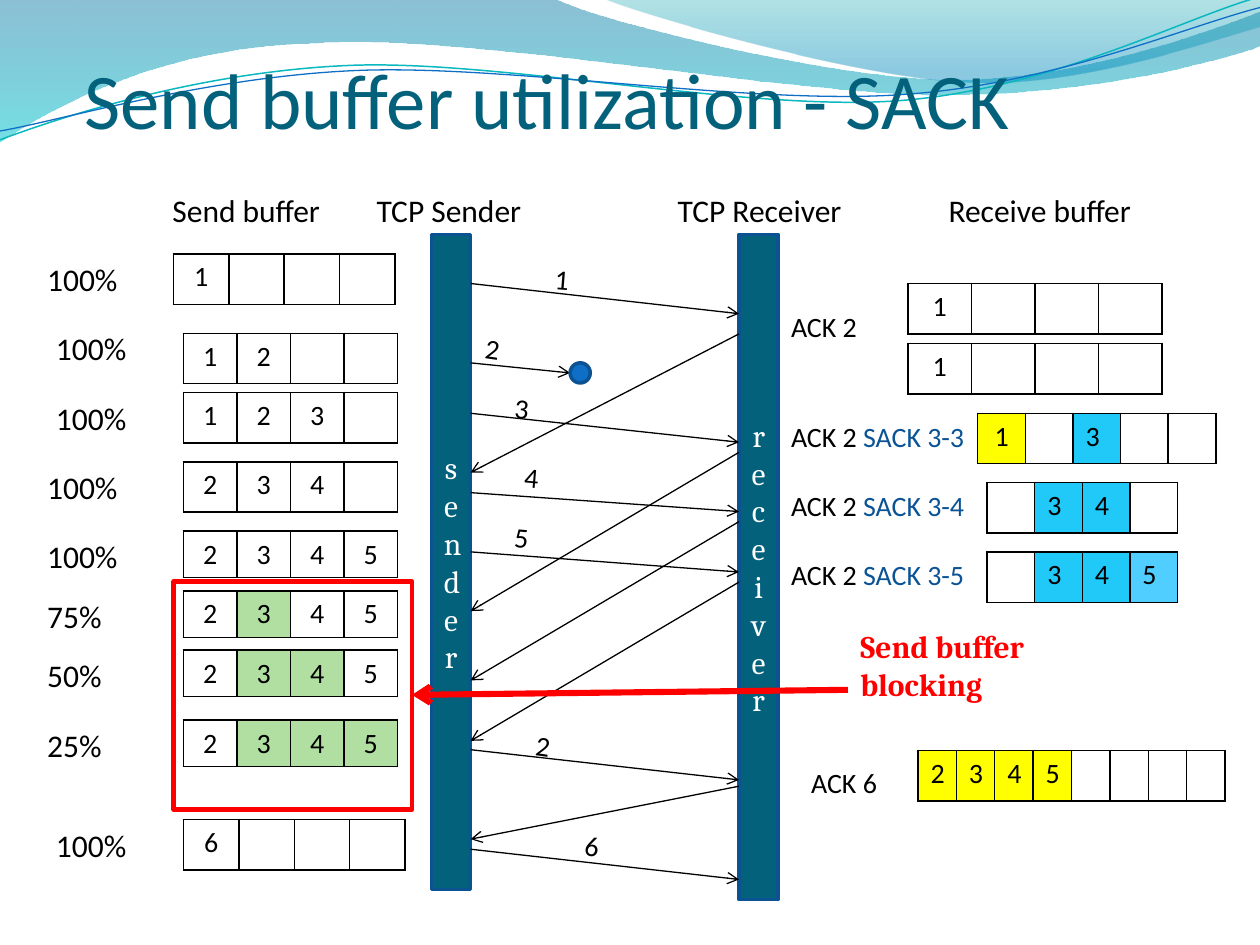
from dataclasses import dataclass

from lxml import etree
from pptx import Presentation
from pptx.dml.color import RGBColor
from pptx.enum.shapes import MSO_CONNECTOR, MSO_SHAPE
from pptx.enum.text import MSO_ANCHOR, PP_ALIGN
from pptx.oxml.ns import qn
from pptx.util import Emu, Inches, Pt

LINE = MSO_CONNECTOR.STRAIGHT
RECT, OVAL = MSO_SHAPE.RECTANGLE, MSO_SHAPE.OVAL
TOP, MIDDLE, BOTTOM = MSO_ANCHOR.TOP, MSO_ANCHOR.MIDDLE, MSO_ANCHOR.BOTTOM
LEFT, CENTER = PP_ALIGN.LEFT, PP_ALIGN.CENTER
COLS, ROWS = 100, 75
UNIT = Inches(10) // COLS


@dataclass(frozen=True)
class Theme:
    sans: str = "Calibri"
    serif: str = "Cambria"
    black: str = "000000"
    white: str = "FFFFFF"
    teal: str = "04617B"
    navy: str = "0B5292"
    sack: str = "0B5394"
    blue: str = "0F6FC6"
    cyan: str = "0AB8BF"
    red: str = "FF0000"
    title: int = 45
    head: int = 18
    body: int = 16


T = Theme()
MARKS = {"y": "FFFF00", "b": "20C9F8", "s": "4FCEFF", "g": "B0DFA1"}


@dataclass(frozen=True)
class Box:
    x: float
    y: float
    w: float
    h: float

    def sub(self, x, y, w, h):
        return Box(self.x + x, self.y + y, w, h)

    def emu(self):
        return [grid(v) for v in (self.x, self.y, self.w, self.h)]


def grid(n):
    return Emu(round(n * UNIT))


def rgb(code):
    return RGBColor.from_string(code)


def write(frame, runs, size, font=T.sans, bold=False, align=LEFT):
    """Fill the first paragraph with (text, colour) runs."""
    para = frame.paragraphs[0]
    para.alignment = align
    for text, color in runs:
        run = para.add_run()
        run.text = text
        run.font.size, run.font.name, run.font.bold = Pt(size), font, bold
        run.font.color.rgb = rgb(color)


def label(slide, box, runs, size, anchor=TOP, turn=0, font=T.sans, bold=False):
    shape = slide.shapes.add_textbox(*box.emu())
    shape.rotation = turn
    shape.text_frame.word_wrap = True
    shape.text_frame.vertical_anchor = anchor
    write(shape.text_frame, runs, size, font, bold)
    return shape


def solid(slide, kind, box, fill, line, width):
    shape = slide.shapes.add_shape(kind, *box.emu())
    shape.shadow.inherit = False
    if fill:
        shape.fill.solid()
        shape.fill.fore_color.rgb = rgb(fill)
    else:
        shape.fill.background()
    shape.line.color.rgb = rgb(line)
    shape.line.width = Pt(width)
    return shape


def arrow(slide, box, x1, y1, x2, y2, color=T.black, width=0.75):
    ends = [grid(v) for v in (box.x + x1, box.y + y1, box.x + x2, box.y + y2)]
    link = slide.shapes.add_connector(LINE, *ends)
    link.line.color.rgb = rgb(color)
    link.line.width = Pt(width)
    etree.SubElement(link.line._ln, qn("a:tailEnd"), type="arrow")
    etree.SubElement(link._element.spPr, qn("a:effectLst"))


def edge(cell):
    props = cell._tc.get_or_add_tcPr()
    for n, side in enumerate(("lnL", "lnR", "lnT", "lnB")):
        line = etree.Element(qn("a:" + side), w=str(Pt(1)))
        fill = etree.SubElement(line, qn("a:solidFill"))
        etree.SubElement(fill, qn("a:srgbClr"), val=T.black)
        props.insert(n, line)


def buffer(slide, box, slots, marks="", center=True):
    """Draw one slot per character; '.' is an empty or unmarked slot."""
    table = slide.shapes.add_table(1, len(slots), *box.emu()).table
    table.first_row = table.horz_banding = False
    for n, (slot, mark) in enumerate(zip(slots, marks.ljust(len(slots), "."))):
        table.columns[n].width = grid(box.w / len(slots))
        cell = table.cell(0, n)
        if mark in MARKS:
            cell.fill.solid()
            cell.fill.fore_color.rgb = rgb(MARKS[mark])
        else:
            cell.fill.background()
        edge(cell)
        if slot != ".":
            align = CENTER if center or n == 0 else LEFT
            write(cell.text_frame, [(slot, T.black)], T.body, align=align)


def curve(slide, box, start, parts, closed=False):
    """Trace lines (one point) and Bezier arcs (three points) from start."""
    points = [start] + [point for part in parts for point in part]
    spots = [(grid(box.x + x), grid(box.y + y)) for x, y in points]
    maker = slide.shapes.build_freeform(*spots[0])
    maker.add_line_segments(spots[1:], close=closed)
    shape = maker.convert_to_shape()
    shape.shadow.inherit = False
    steps = iter(list(shape._element.iter(qn("a:lnTo"))))
    for part in parts:
        group = [next(steps) for _ in part]
        if len(group) == 3:
            arc = etree.Element(qn("a:cubicBezTo"))
            group[0].addprevious(arc)
            for step in group:
                arc.append(step[0])
                step.getparent().remove(step)
    return shape


def band(slide, box, start, parts, stops):
    shape = curve(slide, box, start, parts, True)
    shape.line.fill.background()
    shape.fill.gradient()
    shape.fill.gradient_angle = 270
    for stop, (place, color, alpha) in zip(shape.fill.gradient_stops, stops):
        stop.position = place
        stop.color.rgb = rgb(color)
        tint = stop._gs.find(qn("a:srgbClr"))
        etree.SubElement(tint, qn("a:alpha"), val=str(alpha * 1000))


def waves(slide, box):
    band(slide, box, (0, 0), [
        [(44, -0.1)], [(47.6, 1.7), (66.4, 6.3), (75.8, 6.3)],
        [(85.3, 6.3), (95.8, 2.6), (100, 0.9)], [(100.1, 3.6)],
        [(98.3, 4.4), (87, 7.6), (74.6, 7.5)], [(62.2, 7.5), (38.2, 2.8), (25.7, 3.4)],
        [(12.9, 3.6), (4.6, 8.3), (-0.1, 11.3)],
    ], [(0, "0074A1", 45), (1, "00C6CF", 55)])
    band(slide, box, (47.9, -0.1), [
        [(50.9, 1.2), (68.2, 6.2), (76.9, 6.5)],
        [(85.6, 6.9), (96.1, 3.2), (100, 2.1)], [(100, 0)],
    ], [(0, "00A1A9", 30), (0.8, "008BBF", 45)])
    for color, width, start, arcs in (
        (T.cyan, 0.85, (0, 11.1), [[(4.8, 9.3), (15.8, 5.7), (27.7, 5.2)],
                                   [(39.5, 4.7), (59.3, 8.9), (71.3, 8)],
                                   [(83.3, 7.1), (93.8, 1.5), (99.8, -0.2)]]),
        (T.blue, 0.75, (0, 10.4), [[(4.7, 9.6), (16.4, 6.1), (28.3, 5.6)],
                                   [(40.3, 5.1), (59.7, 8.4), (71.7, 7.5)],
                                   [(83.6, 6.7), (94.1, 2.1), (100, 0.6)]]),
    ):
        line = curve(slide, box, start, arcs)
        line.fill.background()
        line.line.color.rgb = rgb(color)
        line.line.width = Pt(width)


def header(slide, box):
    shape = label(slide, box.sub(6.7, 3.6, 90, 7.9),
                  [("Send buffer utilization - SACK", T.teal)], T.title, BOTTOM)
    frame = shape.text_frame
    frame.margin_left = frame.margin_right = frame.margin_bottom = 0
    names = "\tSend buffer\tTCP Sender\tTCP Receiver\tReceive buffer"
    heads = label(slide, box.sub(2, 14.65, 96.1, 57.5), [(names, T.black)], T.head)
    props = heads.text_frame.paragraphs[0]._p.get_or_add_pPr()
    tabs = etree.SubElement(props, qn("a:tabLst"))
    for x in (10.7, 26.9, 50.8, 72.3):
        etree.SubElement(tabs, qn("a:tab"), pos=str(grid(x)), algn="l")


def sender(slide, box):
    for share, x, y, slots, marks in (
        (100, 0, 0, "1...", ""), (100, 0.7, 6.3, "12..", ""),
        (100, 0.7, 11, "123.", ""), (100, 0, 16.5, "234.", ""),
        (100, 0, 22, "2345", ""), (75, 0, 26.75, "2345", ".g"),
        (50, 0, 31.45, "2345", ".gg"), (25, 0, 37, "2345", ".ggg"),
        (100, 0.7, 44.9, "6...", ""),
    ):
        rise = 0.8 if slots == "12.." else 0
        label(slide, box.sub(x, y - rise, 8.3, 4), [(f"{share}%", T.black)], T.head)
        wide = 17.6 if slots.endswith("...") else 17
        high = 4 if "." in slots else 3.7
        buffer(slide, box.sub(11 if y == 0 else 11.8, y, wide, high), slots, marks)


def lanes(slide, box):
    for x, high, name in ((0, 52, "sender"), (24.4, 52.8, "receiver")):
        bar = solid(slide, RECT, box.sub(x, 0, 3.1, high), T.teal, T.navy, 2)
        bar.text_frame.word_wrap = True
        bar.text_frame.vertical_anchor = MIDDLE
        write(bar.text_frame, [(name, T.white)], T.head, T.serif, align=CENTER)
    near, far = 3.1, 24.4
    for y1, y2 in ((3.9, 6.3), (14.2, 16.5), (20.5, 22), (25.2, 26.8),
                   (40.9, 43.3), (48.8, 51.2)):
        arrow(slide, box, near, y1, far, y2)
    for y1, y2 in ((7.9, 18.9), (17.3, 29.9), (22.8, 35.4), (27.6, 40.2), (43.8, 48)):
        arrow(slide, box, far, y1, near, y2)
    arrow(slide, box, near, 10.2, 11, 11)
    solid(slide, OVAL, box.sub(11, 10.2, 1.6, 1.6), T.blue, T.navy, 2)
    for text, x, y, wide, turn in (
        ("1", 8.8, 1.8, 5.6, 4.6), ("2", 3.3, 7.4, 5.2, 8.2),
        ("3", 5.6, 12.3, 11.8, 4.6), ("4", 6.4, 17.6, 6.2, 5),
        ("5", 5.6, 22.3, 6.2, 5), ("2", 7.3, 38.9, 5.2, 8.2), ("6", 11.2, 46.8, 5.2, 8.2),
    ):
        label(slide, box.sub(x, y, wide, 3.7), [(text, T.black)], T.body, turn=turn)


def receiver(slide, box):
    for x, y, ack, sack in ((0, 5.5, "ACK 2", ""), (0, 14.2, "ACK 2 ", "SACK 3-3"),
                            (0, 19.7, "ACK 2 ", "SACK 3-4"),
                            (0, 25.2, "ACK 2 ", "SACK 3-5"), (1.6, 41.7, "ACK 6", "")):
        runs = [(ack, T.black)] + ([(sack, T.sack)] if sack else [])
        label(slide, box.sub(x, y, 17.3 if sack else 8.7, 3.7), runs, T.body)
    for x, y, wide, slots, marks in (
        (10.25, 3.9, 20.2, "1...", ""), (10.25, 8.65, 20.2, "1...", ""),
        (15.8, 14.2, 18.9, "1.3..", "y.b"), (16.55, 19.7, 15.1, ".34.", ".bb"),
        (16.55, 25.2, 15.1, ".345", ".bbs"), (11.05, 40.95, 24.4, "2345....", "yyyy"),
    ):
        buffer(slide, box.sub(x, y, wide, 3.95), slots, marks, False)


def callout(slide, box):
    solid(slide, RECT, box.sub(0, 0, 18.9, 18.1), None, T.red, 2.75)
    arrow(slide, box, 53.5, 8.6, 18.9, 9, T.red, 3.5)
    label(slide, box.sub(53.5, 3.1, 21.3, 7.1), [("Send buffer blocking", T.red)],
          T.head, font=T.serif, bold=True)


def main():
    deck = Presentation()
    deck.slide_width, deck.slide_height = grid(COLS), grid(ROWS)
    slide = deck.slides.add_slide(deck.slide_layouts[6])
    for draw, box in (
        (waves, Box(0, 0, COLS, 12)), (header, Box(0, 0, COLS, 18)),
        (lanes, Box(34.25, 18.6, 27.5, 52.8)), (sender, Box(2.76, 20.15, 29.4, 49)),
        (receiver, Box(61.8, 18.6, 35.4, 46)), (callout, Box(13.8, 46.15, 75, 18.1)),
    ):
        draw(slide, box)
    deck.save("out.pptx")


if __name__ == "__main__":
    main()
